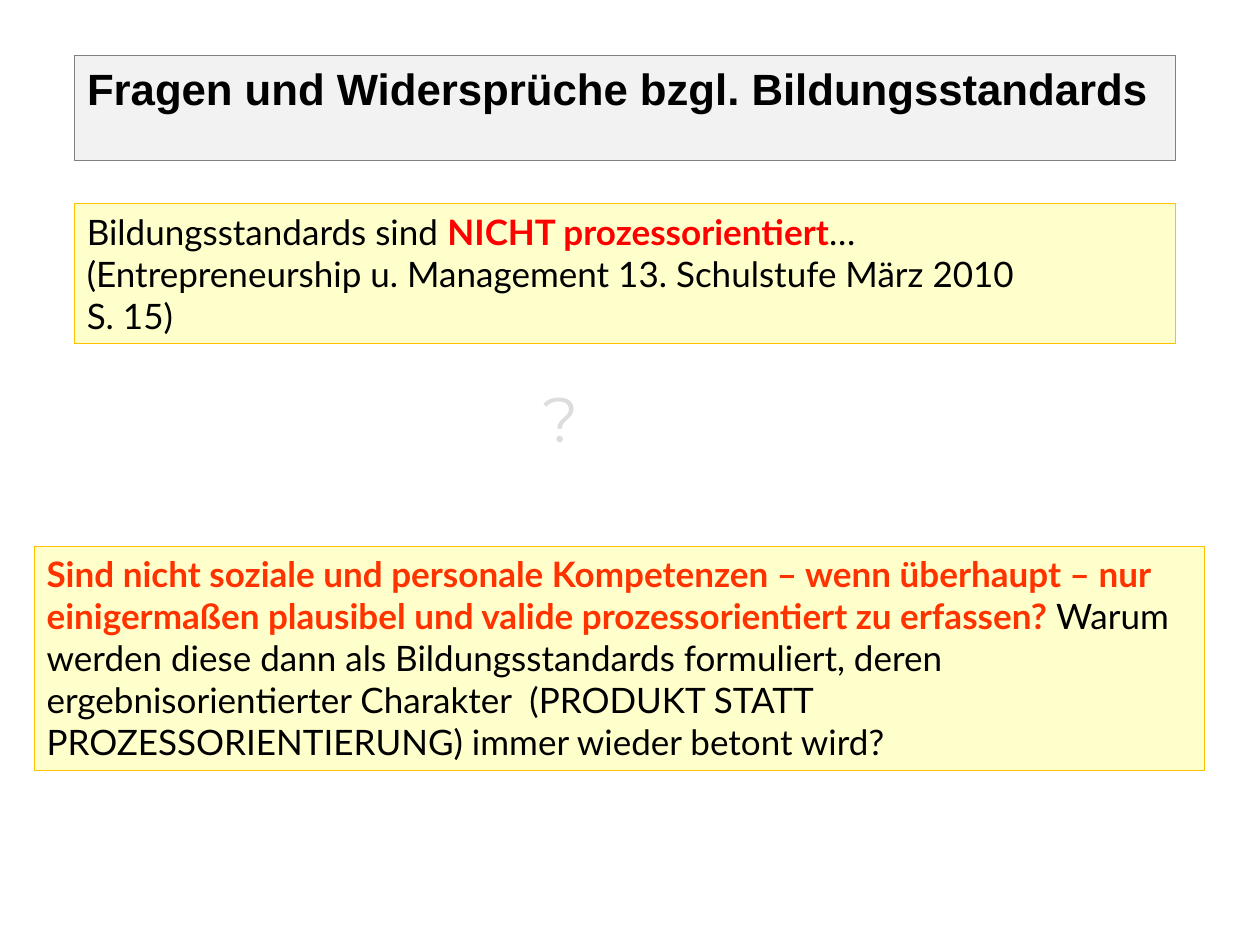
from pptx import Presentation, util as u
from pptx.dml.color import RGBColor
from pptx.enum import shapes, text

BLACK, RED, ORANGE = "000000", "FF0000", "FF3300"

HEADING = [[("Fragen und Widersprüche bzgl. Bildungsstandards", BLACK, True)]]
QUESTION_MARK = [[("?", "DDDDDD", False)]]
THESIS = [
    [("Bildungsstandards sind ", BLACK, False),
     ("NICHT prozessorientiert", RED, True),
     ("…", BLACK, False)],
    [("(Entrepreneurship u. Management 13. Schulstufe März 2010", BLACK, False)],
    [("S. 15)", BLACK, False)],
]
OBJECTION = [
    [("Sind nicht soziale und personale Kompetenzen – wenn überhaupt – nur "
      "einigermaßen plausibel und valide prozessorientiert zu erfassen?", ORANGE, True),
     (" Warum werden diese dann als Bildungsstandards formuliert, deren "
      "ergebnisorientierter Charakter  (PRODUKT STATT PROZESSORIENTIERUNG) "
      "immer wieder betont wird?", BLACK, False)],
]
STATEMENTS = [
    (THESIS, (1.5, 4.11, 22.2, 2.82)),
    (OBJECTION, (0.69, 11.02, 23.6, 4.52)),
]


def color(value):
    return RGBColor.from_string(value)


def write(frame, paragraphs, font="Lato", size=20, wrap=True,
          fit=text.MSO_AUTO_SIZE.SHAPE_TO_FIT_TEXT):
    frame.word_wrap = wrap
    frame.auto_size = fit
    frame.vertical_anchor = text.MSO_ANCHOR.TOP
    for index, runs in enumerate(paragraphs):
        paragraph = frame.add_paragraph() if index else frame.paragraphs[0]
        paragraph.alignment = text.PP_ALIGN.LEFT
        for wording, shade, bold in runs:
            run = paragraph.add_run()
            run.text = wording
            run.font.name = font
            run.font.size = u.Pt(size)
            run.font.bold = bold
            run.font.color.rgb = color(shade)


def paint(box, fill, line):
    box.fill.solid()
    box.fill.fore_color.rgb = color(fill)
    box.line.color.rgb = color(line)
    box.line.width = u.Pt(0.75)


def main():
    deck = Presentation()
    deck.slide_width, deck.slide_height = u.Cm(25.4), u.Cm(19.05)
    slide = deck.slides.add_slide(deck.slide_layouts[5])

    heading = slide.shapes.title
    heading.left, heading.top, heading.width, heading.height = map(
        u.Cm, (1.5, 1.12, 22.2, 1.32))
    paint(heading, "F2F2F2", "808080")
    write(heading.text_frame, HEADING, font="Arial", size=25)

    question_mark = slide.shapes.add_textbox(*map(u.Cm, (10.69, 7.52, 3.61, 3.2)))
    write(question_mark.text_frame, QUESTION_MARK, font="Montserrat", size=36,
          wrap=False, fit=text.MSO_AUTO_SIZE.NONE)

    for paragraphs, place in STATEMENTS:
        statement = slide.shapes.add_shape(
            shapes.MSO_SHAPE.RECTANGLE, *map(u.Cm, place))
        statement.shadow.inherit = False
        paint(statement, "FFFFCC", "FFC000")
        write(statement.text_frame, paragraphs)

    deck.save("out.pptx")


if __name__ == "__main__":
    main()
